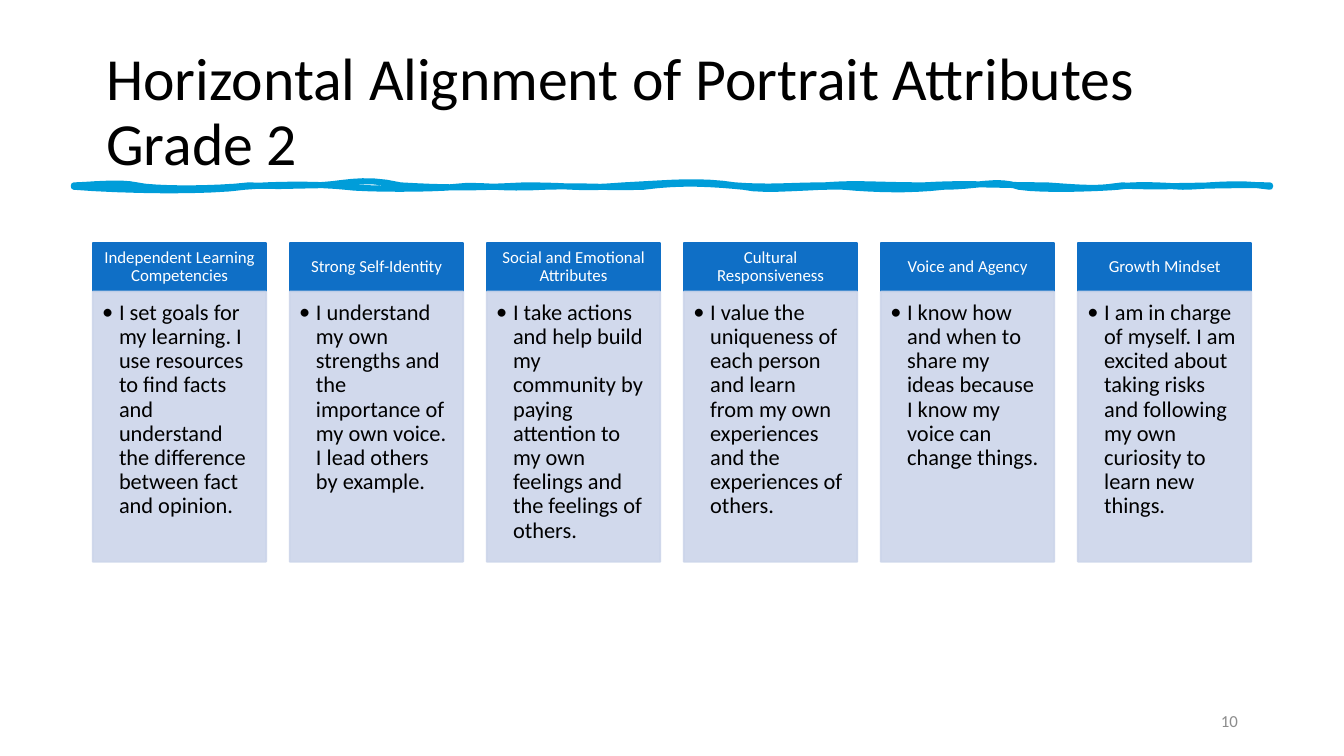
from lxml import etree
from pptx import Presentation, util as u
from pptx.dml.color import RGBColor
from pptx.enum import shapes as s, text as t
from pptx.oxml.ns import qn

MARGIN, CONTENT_WIDTH = 0.69, 8.62
COLUMN, HEADER_TOP, HEADER_HEIGHT, BODY_HEIGHT = 1.29, 1.81, 0.36, 2.01
STEPS = 8

attributes = [
    ("Independent Learning Competencies",
     "I set goals for my learning. I use resources to find facts and understand "
     "the difference between fact and opinion."),
    ("Strong Self-Identity",
     "I understand my own strengths and the importance of my own voice. "
     "I lead others by example."),
    ("Social and Emotional Attributes",
     "I take actions and help build my community by paying attention to my own "
     "feelings and the feelings of others."),
    ("Cultural Responsiveness",
     "I value the uniqueness of each person and learn from my own experiences "
     "and the experiences of others."),
    ("Voice and Agency",
     "I know how and when to share my ideas because I know my voice can change things."),
    ("Growth Mindset",
     "I am in charge of myself. I am excited about taking risks and following "
     "my own curiosity to learn new things."),
]

# Each brush curve: two control points and the x where it returns to its edge
upper_edge = [
    (0.64, 1.38, 0.89, 1.35, 1.02), (1.14, 1.41, 1.60, 1.41, 1.85),
    (2.13, 1.39, 2.16, 1.38, 2.33), (2.54, 1.38, 2.68, 1.31, 2.98),
    (3.31, 1.40, 3.52, 1.40, 3.90), (4.31, 1.38, 4.28, 1.41, 4.64),
    (5.03, 1.36, 5.20, 1.34, 5.47), (5.73, 1.40, 5.88, 1.38, 6.13),
    (6.41, 1.36, 6.51, 1.38, 6.87), (7.21, 1.36, 7.41, 1.38, 7.79),
    (8.17, 1.41, 8.19, 1.40, 8.35), (8.55, 1.40, 9.13, 1.37, 9.45),
]
lower_edge = [
    (9.45, 1.38, 9.45, 1.39, 9.45),
    (9.20, 1.35, 8.95, 1.39, 8.80), (8.63, 1.38, 8.45, 1.37, 8.32),
    (8.22, 1.40, 7.77, 1.42, 7.58), (7.43, 1.33, 7.27, 1.39, 7.02),
    (6.76, 1.42, 6.50, 1.41, 6.28), (6.07, 1.38, 5.70, 1.43, 5.53),
    (5.32, 1.37, 5.08, 1.35, 4.79), (4.50, 1.40, 4.35, 1.38, 4.05),
    (3.74, 1.41, 3.56, 1.37, 3.40), (3.23, 1.41, 2.71, 1.41, 2.57),
    (2.38, 1.37, 2.06, 1.37, 1.82), (1.56, 1.43, 0.91, 1.42, 0.55),
]


def paint(shape, color, line_width, opacity=100):
    shape.shadow.inherit = False
    shape.line.width = u.Pt(line_width)
    for fill in (shape.fill, shape.line.fill):
        fill.solid()
        fill.fore_color.rgb = RGBColor.from_string(color)
    if opacity < 100:
        for tint in shape._element.spPr.iter(qn("a:srgbClr")):
            etree.SubElement(tint, qn("a:alpha"), val=str(opacity * 1000))


def write(shape, words, size, color, align, anchor, insets, spacing=0.9, bullet=False):
    frame = shape.text_frame
    frame.text = words
    settings = {"word_wrap": True, "auto_size": t.MSO_AUTO_SIZE.NONE,
                "vertical_anchor": anchor}
    sides = ("margin_left", "margin_top", "margin_right", "margin_bottom")
    settings.update(zip(sides, map(u.Inches, insets)))
    for name, value in settings.items():
        setattr(frame, name, value)
    paragraph = frame.paragraphs[0]
    if bullet:
        properties = paragraph._p.get_or_add_pPr()
        properties.set("marL", str(u.Pt(9)))
        properties.set("indent", str(-u.Pt(9)))
        etree.SubElement(properties, qn("a:buFont"), typeface="Calibri")
        etree.SubElement(properties, qn("a:buChar"), char="•")
    paragraph.alignment, paragraph.line_spacing = align, spacing
    for run in paragraph.runs:
        run.font.name, run.font.size = "Calibri", u.Pt(size)
        run.font.color.rgb = RGBColor.from_string(color)


deck = Presentation()
deck.slide_width = u.Inches(10)
deck.slide_height = deck.slide_width * 9 // 16
slide = deck.slides.add_slide(deck.slide_layouts[5])
shapes = slide.shapes
left, middle, top = t.PP_ALIGN.LEFT, t.MSO_ANCHOR.MIDDLE, t.MSO_ANCHOR.TOP
default_insets = (0.1, 0.05, 0.1, 0.05)

title = shapes.title
title.left, title.top, title.width, title.height = map(
    u.Inches, (MARGIN, 0.3, CONTENT_WIDTH, 1.09))
write(title, "Horizontal Alignment of Portrait Attributes\vGrade 2",
      32, "000000", left, middle, default_insets)

# Brush stroke under the title, sampled from its curves
stroke = [(0.55, 1.38)]
for edge_y, edge in ((1.38, upper_edge), (1.39, lower_edge)):
    start_x = stroke[-1][0]
    for x1, y1, x2, y2, end_x in edge:
        for step in range(1, STEPS + 1):
            f = step / STEPS
            r = 1 - f
            weights = (r ** 3, 3 * r * r * f, 3 * r * f * f, f ** 3)
            stroke.append(tuple(
                sum(w * p for w, p in zip(weights, points))
                for points in ((start_x, x1, x2, end_x), (edge_y, y1, y2, edge_y))))
        start_x = end_x
outline = [(u.Inches(x), u.Inches(y)) for x, y in stroke]
builder = shapes.build_freeform(*outline[0])
builder.add_line_segments(outline[1:])
brush = builder.convert_to_shape()
paint(brush, "009DD9", 3.25)
brush.fill.background()

pitch = (CONTENT_WIDTH - COLUMN) / (len(attributes) - 1)
rectangle = s.MSO_SHAPE.RECTANGLE
for column, (heading, statement) in enumerate(attributes):
    x = MARGIN + column * pitch
    header = shapes.add_shape(
        rectangle, *map(u.Inches, (x, HEADER_TOP, COLUMN, HEADER_HEIGHT)))
    paint(header, "0F6FC6", 1)
    write(header, heading, 9, "FFFFFF", t.PP_ALIGN.CENTER, middle,
          (0.07, 0.04, 0.07, 0.04))
    body = shapes.add_shape(
        rectangle, *map(u.Inches, (x, HEADER_TOP + HEADER_HEIGHT, COLUMN, BODY_HEIGHT)))
    paint(body, "CCD5EA", 1, opacity=90)
    write(body, statement, 12, "000000", left, top, (0.07, 0.07, 0.1, 0.1), bullet=True)

page_number = shapes.add_textbox(*map(u.Inches, (7.06, 5.21, 2.25, 0.3)))
write(page_number, "10", 9, "8C8C8C", t.PP_ALIGN.RIGHT, middle, default_insets, spacing=1.0)

deck.save("out.pptx")
